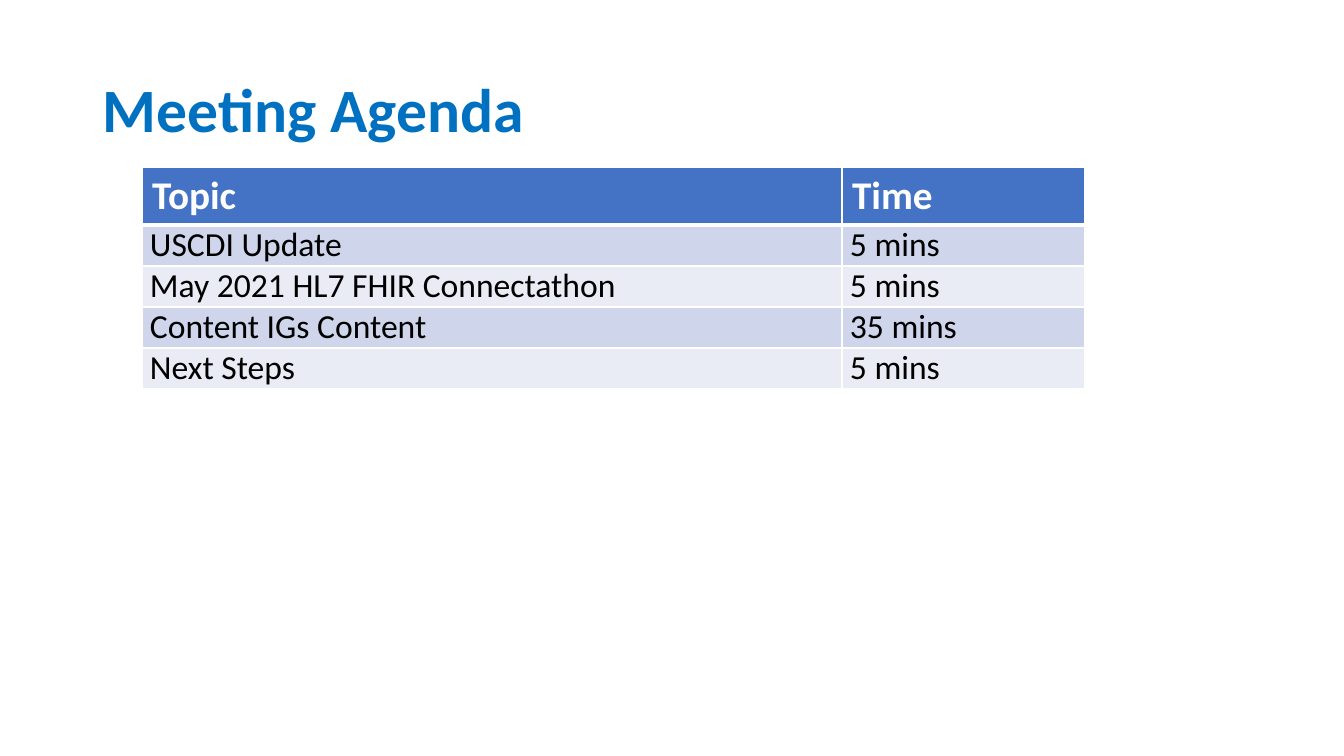
from lxml.etree import SubElement as Sub
from pptx import Presentation
from pptx.dml.color import RGBColor as RGB
from pptx.enum.text import MSO_ANCHOR as Anchor
from pptx.oxml.ns import qn
from pptx.util import Pt

PX = 914400 / 100.8
BLUE = RGB(0x00, 0x70, 0xC0)
HEAD = RGB(0x44, 0x72, 0xC4)
BANDS = [RGB(0xE9, 0xEB, 0xF5), RGB(0xCF, 0xD5, 0xEA)]
WHITE = RGB(0xFF, 0xFF, 0xFF)
BLACK = RGB(0x00, 0x00, 0x00)
AGENDA = [
    ("Topic", "Time"),
    ("USCDI Update", "5 mins"),
    ("May 2021 HL7 FHIR Connectathon", "5 mins"),
    ("Content IGs Content", "35 mins"),
    ("Next Steps", "5 mins"),
]


def px(*sizes):
    return [round(size * PX) for size in sizes]


def style(para, size, color, bold):
    font = para.font
    font.name, font.size, font.bold = "Calibri", Pt(size), bold
    font.color.rgb = color


deck = Presentation()
deck.slide_width, deck.slide_height = px(1344, 756)
slide = deck.slides.add_slide(deck.slide_layouts[6])

title = slide.shapes.add_textbox(*px(93, 40, 1159, 146)).text_frame
title.word_wrap = True
title.vertical_anchor = Anchor.MIDDLE
title.text = "Meeting Agenda"
title.paragraphs[0].line_spacing = 0.9
style(title.paragraphs[0], 44, BLUE, True)

table = slide.shapes.add_table(len(AGENDA), 2, *px(142, 167, 943, 222)).table
for col, width in zip(table.columns, px(700, 243)):
    col.width = width

for r, texts in enumerate(AGENDA):
    top = r == 0
    table.rows[r].height = px(58 if top else 41)[0]
    for c, text in enumerate(texts):
        cell = table.cell(r, c)
        cell.text = text
        para = cell.text_frame.paragraphs[0]
        if top:
            style(para, 28, WHITE, True)
        else:
            style(para, 24, BLACK, False)
            para.space_after = Pt(6)
            cell.margin_left, cell.margin_right = px(8, 8)
            cell.margin_top = cell.margin_bottom = 0
        props = cell._tc.get_or_add_tcPr()
        for side in "LRTB":
            thick = (top and side == "B") or (r == 1 and side == "T")
            line = Sub(props, qn(f"a:ln{side}"), w=str(Pt(3 if thick else 1)))
            Sub(Sub(line, qn("a:solidFill")), qn("a:srgbClr"), val=str(WHITE))
        cell.fill.solid()
        cell.fill.fore_color.rgb = HEAD if top else BANDS[r % 2]

deck.save("out.pptx")
